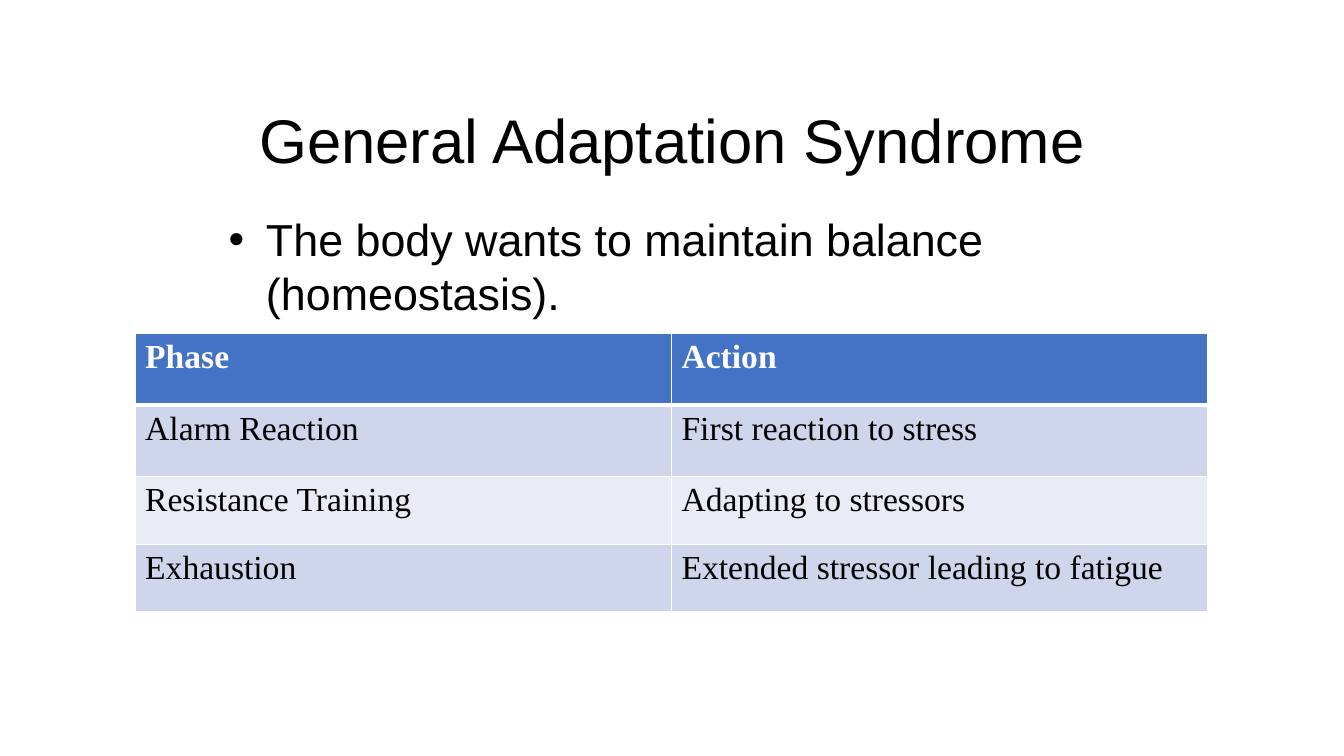
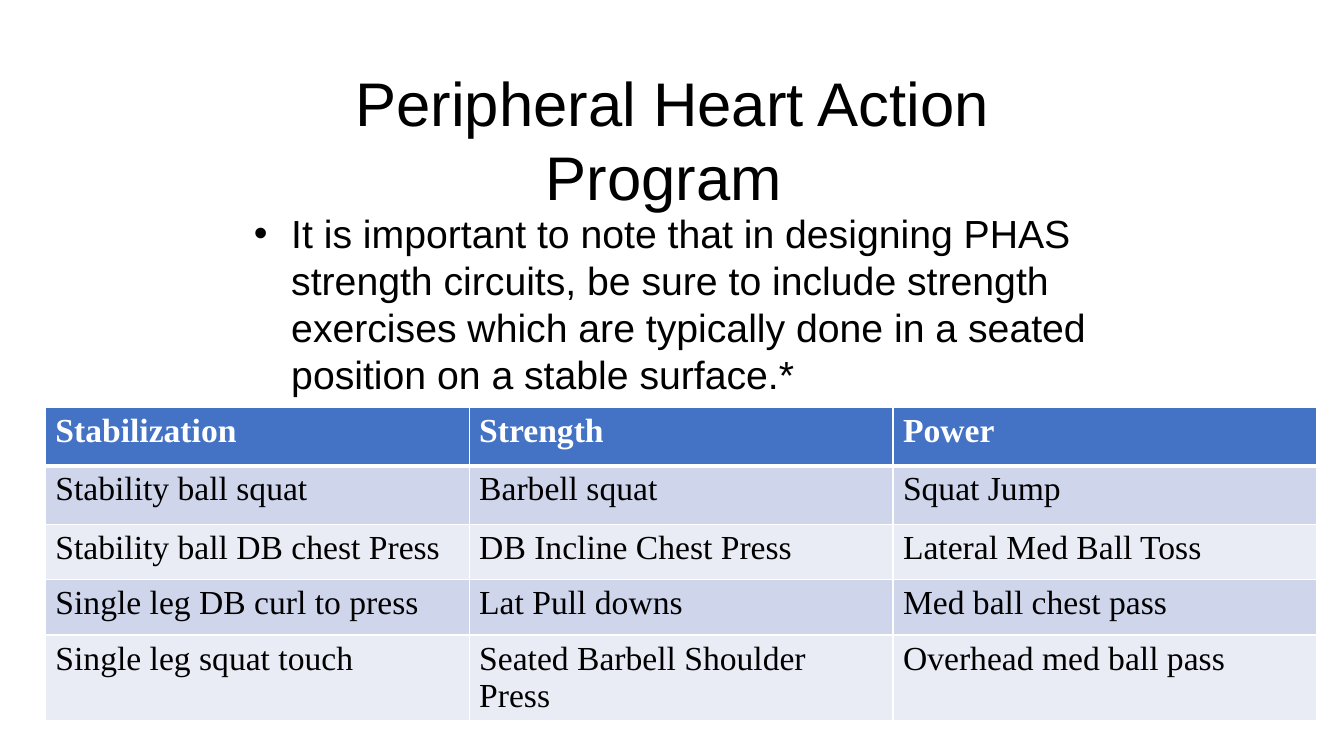
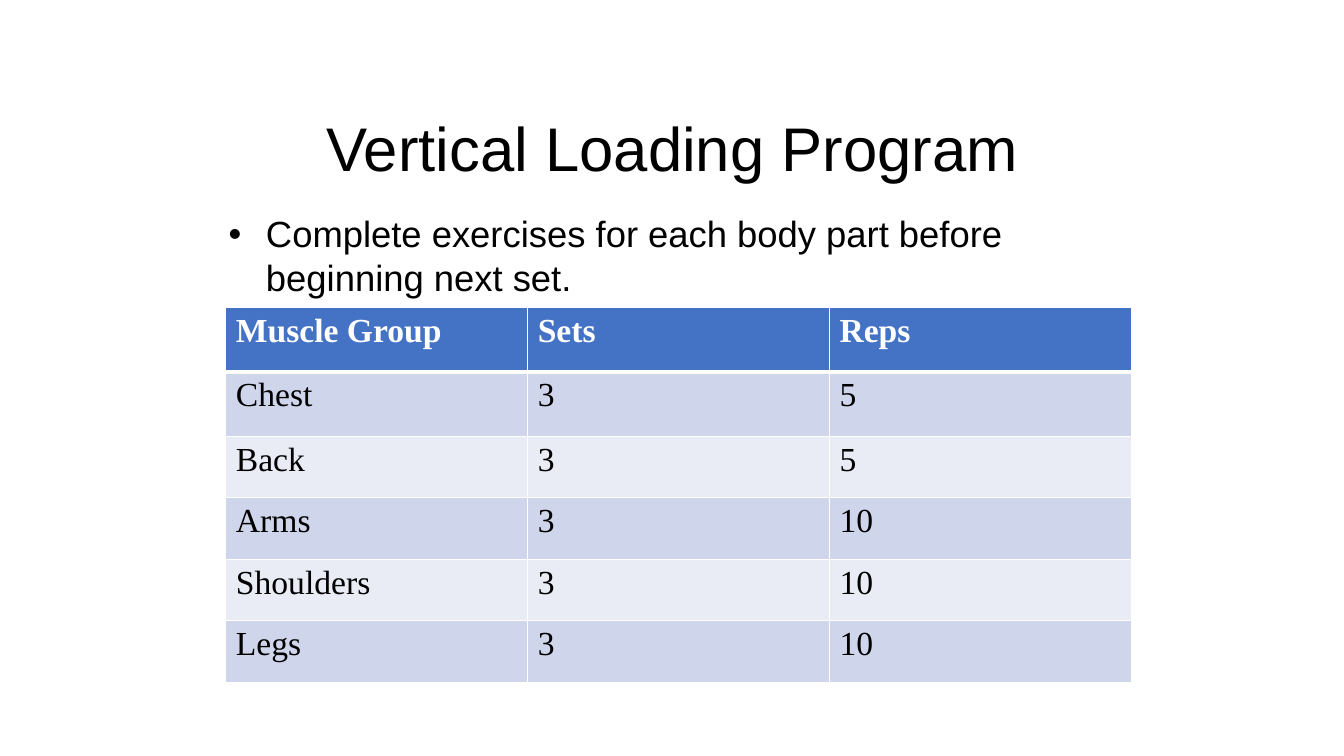
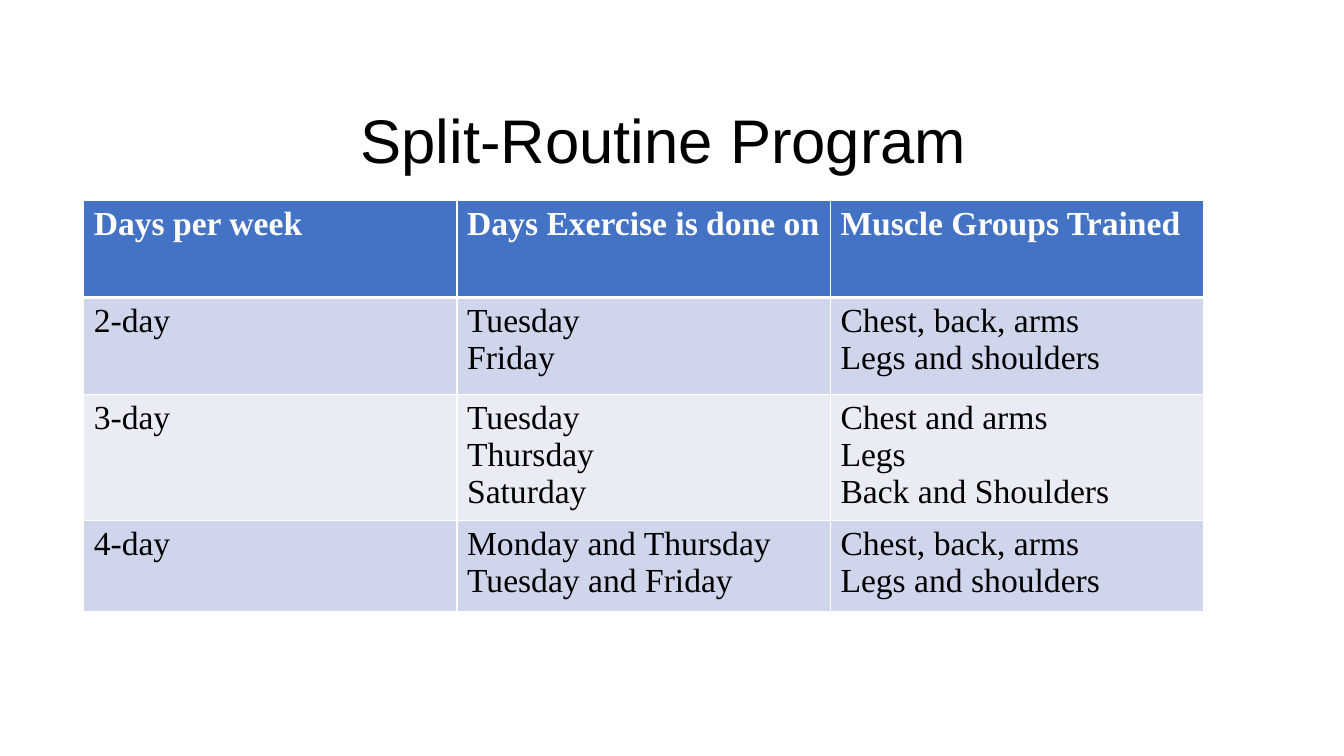
from pptx import Presentation
from pptx.dml.color import RGBColor
from pptx.enum.text import MSO_ANCHOR as Anchor, PP_ALIGN as Align
from pptx.oxml import parse_xml
from pptx.oxml.ns import nsdecls
from pptx.util import Inches, Pt

BLACK = RGBColor(0, 0, 0)
WHITE = RGBColor(255, 255, 255)
BLUE = RGBColor(0x44, 0x72, 0xC4)
BANDS = [RGBColor(0xE9, 0xEB, 0xF5), RGBColor(0xCF, 0xD5, 0xEA)]
SANS, SERIF = "Arial", "Times New Roman"

SLIDES = [
    {
        "title": "General Adaptation Syndrome",
        "top": 0.75,
        "note": ("The body wants to maintain balance (homeostasis). ", 32, (2.17, 2.05, 9, 4.95)),
        "grid": (1.34, 3.31, 10.64),
        "heights": (0.71, 0.71, 0.67, 0.67),
        "rows": [
            ("Phase", "Action"),
            ("Alarm Reaction", "First reaction to stress"),
            ("Resistance Training", "Adapting to stressors"),
            ("Exhaustion", "Extended stressor leading to fatigue"),
        ],
    },
    {
        "title": "Peripheral Heart Action Program ",
        "top": 0.75,
        "note": (
            "It is important to note that in designing PHAS strength circuits, "
            "be sure to include strength exercises which are typically done "
            "in a seated position on a stable surface.*",
            28, (2.42, 2.03, 8.75, 1.97)),
        "grid": (0.45, 4.04, 12.61),
        "heights": (0.58, 0.58, 0.55, 0.55, 0.84),
        "rows": [
            ("Stabilization", "Strength", "Power"),
            ("Stability ball squat", "Barbell squat", "Squat Jump"),
            ("Stability ball DB chest Press", "DB Incline Chest Press", "Lateral Med Ball Toss"),
            ("Single leg DB curl to press", "Lat Pull downs", "Med ball chest pass"),
            ("Single leg squat touch", "Seated Barbell Shoulder Press", "Overhead med ball pass"),
        ],
    },
    {
        "title": "Vertical Loading Program",
        "top": 0.83,
        "note": (
            "Complete exercises for each body part before beginning next set.",
            26, (2.17, 2.05, 9, 4.95)),
        "grid": (2.24, 3.05, 8.98),
        "heights": (0.64, 0.64, 0.61, 0.61, 0.61, 0.61),
        "rows": [
            ("Muscle Group", "Sets", "Reps"),
            ("Chest", "3", "5"),
            ("Back", "3", "5"),
            ("Arms", "3", "10"),
            ("Shoulders", "3", "10"),
            ("Legs", "3", "10"),
        ],
    },
    {
        "title": "Split-Routine Program ",
        "top": 0.75,
        "note": None,
        "grid": (0.83, 1.99, 11.11),
        "heights": (0.96, 0.96, 1.21, 0.91),
        "rows": [
            ("Days per week", "Days Exercise is done on", "Muscle Groups Trained"),
            ("2-day", "Tuesday\nFriday", "Chest, back, arms\nLegs and shoulders"),
            ("3-day", "Tuesday\nThursday\nSaturday", "Chest and arms\nLegs\nBack and Shoulders"),
            ("4-day", "Monday and Thursday\nTuesday and Friday", "Chest, back, arms\nLegs and shoulders"),
        ],
    },
]


def style(para, face, size, color, bold=False):
    for run in para.runs:
        font = run.font
        font.name, font.size, font.bold = face, Pt(size), bold
        font.color.rgb = color


def add_text(slide, text, size, box):
    frame = slide.shapes.add_textbox(*map(Inches, box)).text_frame
    frame.word_wrap = True
    frame.text = text
    para = frame.paragraphs[0]
    style(para, SANS, size, BLACK)
    return frame, para


def add_title(slide, text, top):
    frame, para = add_text(slide, text, 44, (2.17, top, 9, 1.25))
    frame.vertical_anchor = Anchor.MIDDLE
    para.alignment = Align.CENTER


def add_note(slide, text, size, box):
    para = add_text(slide, text, size, box)[1]
    props = para._p.get_or_add_pPr()
    props.set("marL", str(Inches(0.37)))
    props.set("indent", str(-Inches(0.37)))
    props.append(parse_xml(f'<a:buClr {nsdecls("a")}><a:srgbClr val="{BLACK}"/></a:buClr>'))
    props.append(parse_xml(f'<a:buFont {nsdecls("a")} typeface="{SANS}"/>'))
    props.append(parse_xml(f'<a:buChar {nsdecls("a")} char="•"/>'))


def set_edges(cell, row):
    widths = {"L": 1, "R": 1, "T": 3 if row == 1 else 1, "B": 3 if row == 0 else 1}
    props = cell._tc.get_or_add_tcPr()
    for pos, (side, width) in enumerate(widths.items()):
        props.insert(pos, parse_xml(
            f'<a:ln{side} {nsdecls("a")} w="{Pt(width)}"><a:solidFill>'
            f'<a:srgbClr val="{WHITE}"/></a:solidFill></a:ln{side}>'))


def add_grid(slide, rows, place, heights):
    left, top, width = place
    count = len(rows[0])
    box = map(Inches, (left, top, width, sum(heights)))
    table = slide.shapes.add_table(len(rows), count, *box).table
    for col in table.columns:
        col.width = Inches(width / count)
    for r, texts in enumerate(rows):
        table.rows[r].height = Inches(heights[r])
        head = r == 0
        for c, text in enumerate(texts):
            cell = table.cell(r, c)
            cell.text = text
            cell.margin_bottom = 0
            cell.fill.solid()
            cell.fill.fore_color.rgb = BLUE if head else BANDS[r % 2]
            set_edges(cell, r)
            for para in cell.text_frame.paragraphs:
                style(para, SERIF, 24, WHITE if head else BLACK, head)


def main():
    """Build the training program deck."""
    deck = Presentation()
    deck.slide_width, deck.slide_height = Inches(13.33), Inches(7.5)
    for page in SLIDES:
        slide = deck.slides.add_slide(deck.slide_layouts[6])
        add_title(slide, page["title"], page["top"])
        if page["note"]:
            add_note(slide, *page["note"])
        add_grid(slide, page["rows"], page["grid"], page["heights"])
    deck.save("out.pptx")


if __name__ == "__main__":
    main()
